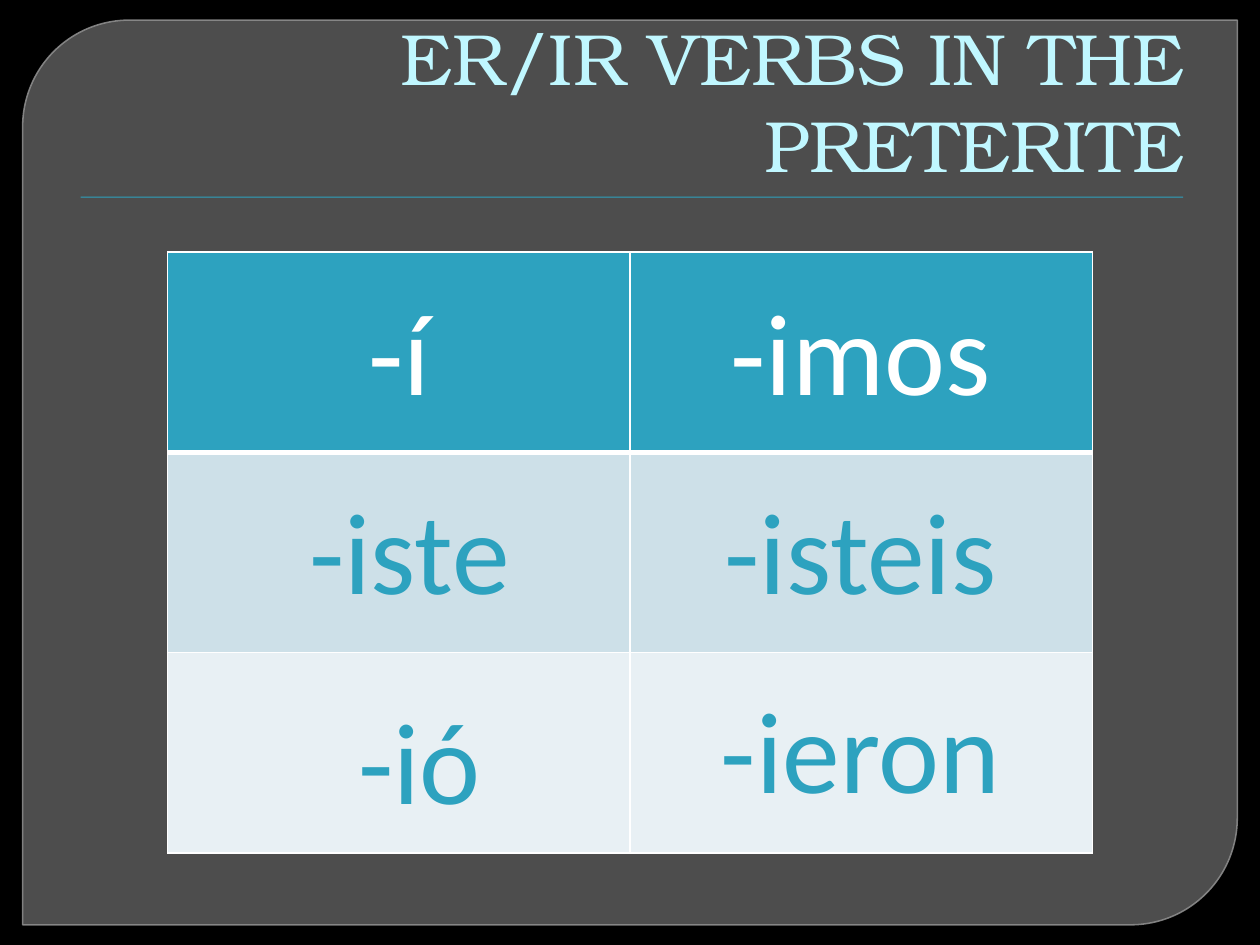
import pptx
import pptx.util
import pptx.dml.color
import pptx.enum.shapes
import pptx.enum.text
import pptx.oxml.ns
from lxml import etree

Inches = pptx.util.Inches
Pt = pptx.util.Pt
ALIGN = pptx.enum.text.PP_ALIGN
ANCHOR = pptx.enum.text.MSO_ANCHOR
SHAPE = pptx.enum.shapes.MSO_SHAPE

TITLE = "ER/IR VERBS IN THE PRETERITE"
TEAL = "2DA2BF"
WHITE = "FFFFFF"
ROW_FILLS = [TEAL, "CDE0E8", "E8F0F4"]
ROW_TEXT_COLORS = [WHITE, TEAL, TEAL]
ENDINGS = [
    [("-í", 1.67, 2.17), ("-imos", 5.33, 2.17)],
    [("-iste", 1.75, 3.75), ("-isteis", 5.33, 3.75)],
    [("-ió", 1.83, 5.42), ("-ieron", 5.33, 5.33)],
]
COLUMN_WIDTH, ROW_HEIGHT = 3.67, 1.59


def rgb(color):
    return pptx.dml.color.RGBColor.from_string(color)


def add_node(parent, tag, **attributes):
    return etree.SubElement(parent, pptx.oxml.ns.qn(tag), attributes)


def set_opacity(shape, color, percent):
    for node in shape.element.spPr.iter(pptx.oxml.ns.qn("a:srgbClr")):
        if node.get("val") == color:
            add_node(node, "a:alpha", val=str(percent * 1000))


def add_block(slide, preset, box, color):
    block = slide.shapes.add_shape(preset, *map(Inches, box))
    block.shadow.inherit = False
    block.fill.solid()
    block.fill.fore_color.rgb = rgb(color)
    block.line.fill.background()
    return block


def add_text(slide, text, box, font_name, size, color, align, anchor):
    frame = slide.shapes.add_textbox(*map(Inches, box)).text_frame
    frame.word_wrap = True
    frame.vertical_anchor = anchor
    paragraph = frame.paragraphs[0]
    paragraph.text = text
    paragraph.alignment = align
    paragraph.font.name = font_name
    paragraph.font.size = Pt(size)
    paragraph.font.color.rgb = rgb(color)


def style_cell(cell, color, widths):
    properties = cell._tc.get_or_add_tcPr()
    for side, width in zip("LRTB", widths):
        border = add_node(properties, f"a:ln{side}", w=str(Pt(width)))
        add_node(add_node(border, "a:solidFill"), "a:srgbClr", val=WHITE)
    cell.fill.solid()
    cell.fill.fore_color.rgb = rgb(color)


def add_endings(slide):
    rows, columns = len(ENDINGS), len(ENDINGS[0])
    table = slide.shapes.add_table(
        rows, columns, Inches(1.33), Inches(2),
        Inches(COLUMN_WIDTH * columns), Inches(ROW_HEIGHT * rows)).table
    for row, endings in enumerate(ENDINGS):
        top = 3 if row == 1 else 1
        bottom = 3 if row == 0 else 1
        for column, (ending, left, y) in enumerate(endings):
            style_cell(table.cell(row, column), ROW_FILLS[row], (1, 1, top, bottom))
            add_text(slide, ending, (left, y, 3, 1.21), "Calibri", 66,
                     ROW_TEXT_COLORS[row], ALIGN.CENTER, ANCHOR.TOP)


def main():
    presentation = pptx.Presentation()
    presentation.slide_width, presentation.slide_height = Inches(10), Inches(7.5)
    slide = presentation.slides.add_slide(presentation.slide_layouts[6])
    slide.background.fill.solid()
    slide.background.fill.fore_color.rgb = rgb("000000")

    panel = add_block(slide, SHAPE.ROUND_2_DIAG_RECTANGLE, (0.18, 0.16, 9.64, 7.18), "777777")
    panel.adjustments[0] = 0.118
    panel.adjustments[1] = 0
    panel.line.color.rgb = rgb("8E8E8E")
    panel.line.width = Pt(0.87)
    set_opacity(panel, "777777", 65)
    set_opacity(panel, "8E8E8E", 88)

    add_block(slide, SHAPE.RECTANGLE, (0.64, 1.56, 8.75, 0.01), TEAL)
    add_text(slide, TITLE, (0.5, 0.28, 9, 1.25), "TeX Gyre Bonum", 41.4,
             "C0F7FF", ALIGN.RIGHT, ANCHOR.BOTTOM)
    add_endings(slide)
    presentation.save("out.pptx")


if __name__ == "__main__":
    main()
